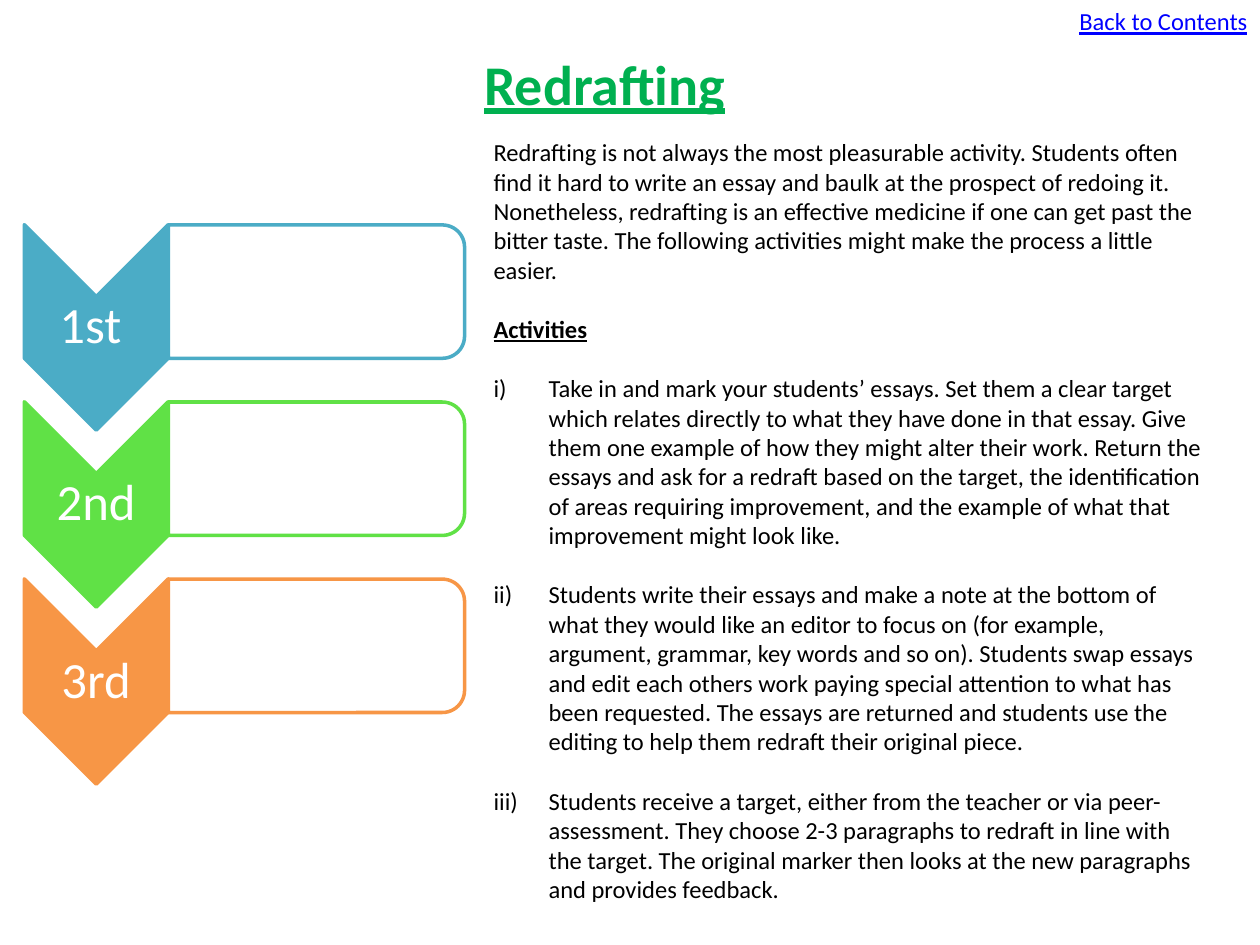
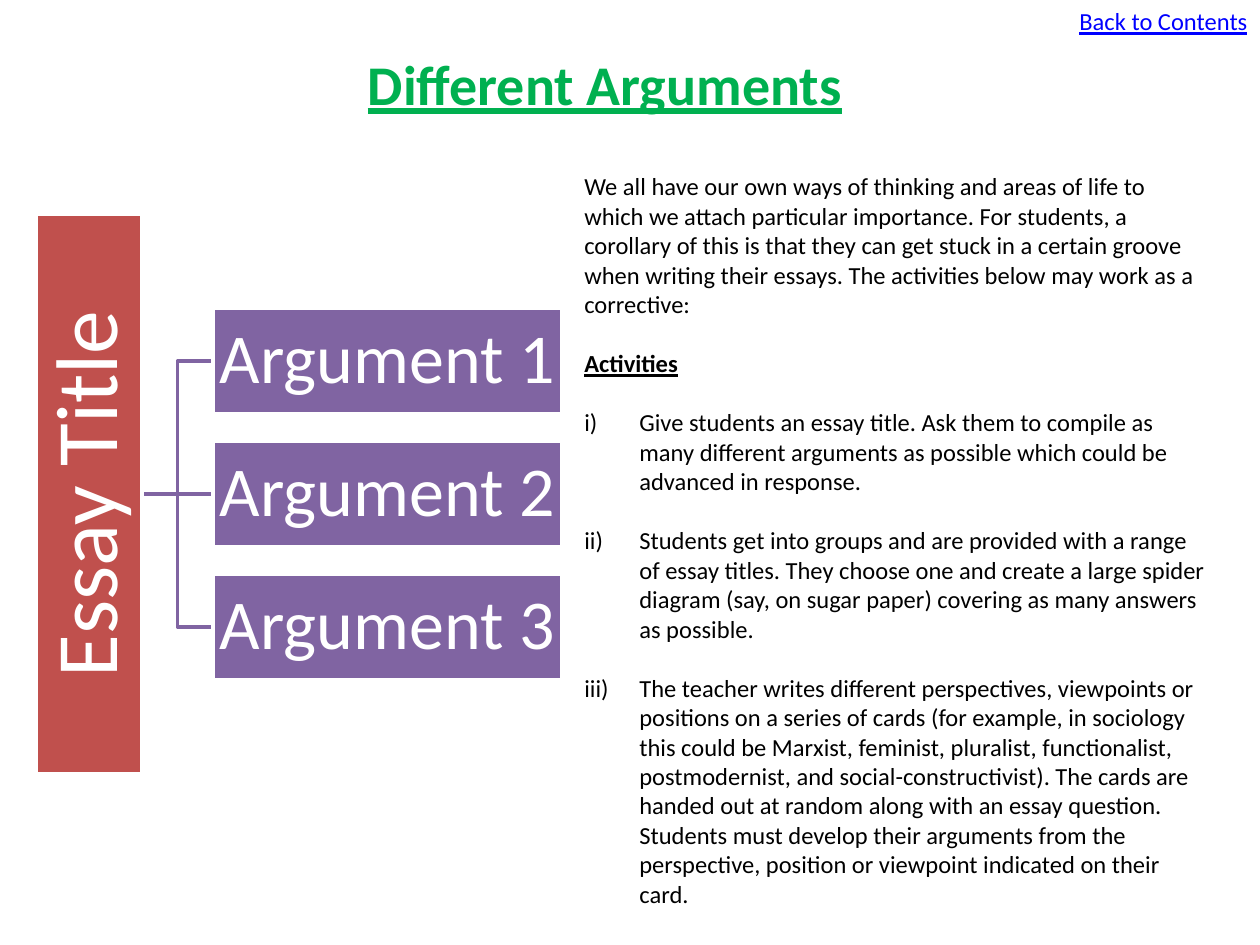
from pptx import Presentation
from pptx import util as u
from pptx.dml.color import RGBColor
from pptx.enum import shapes, text
from pptx.oxml.ns import qn
from lxml import etree

FONT = "Calibri"
BLACK = RGBColor(0x00, 0x00, 0x00)
WHITE = RGBColor(0xFF, 0xFF, 0xFF)
LINK_BLUE = RGBColor(0x00, 0x00, 0xFF)
TITLE_GREEN = RGBColor(0x00, 0xB0, 0x50)
TEAL = RGBColor(0x4B, 0xAC, 0xC6)
LIME = RGBColor(0x60, 0xE1, 0x46)
ORANGE = RGBColor(0xF7, 0x96, 0x46)
RED = RGBColor(0xC0, 0x50, 0x4D)
PURPLE = RGBColor(0x80, 0x64, 0xA2)

LINE_WIDTH = u.Pt(2)
BLANK_LINE = u.Pt(17)
NUMBER_INDENT = u.Cm(1.11)

REDRAFTING_INTRO = (
    "Redrafting is not always the most pleasurable activity. Students often find it hard to write "
    "an essay and baulk at the prospect of redoing it. Nonetheless, redrafting is an effective "
    "medicine if one can get past the bitter taste. The following activities might make the "
    "process a little easier."
)
REDRAFTING_ACTIVITIES = [
    "Take in and mark your students’ essays. Set them a clear target which relates directly to "
    "what they have done in that essay. Give them one example of how they might alter their work. "
    "Return the essays and ask for a redraft based on the target, the identification of areas "
    "requiring improvement, and the example of what that improvement might look like.",
    "Students write their essays and make a note at the bottom of what they would like an editor "
    "to focus on (for example, argument, grammar, key words and so on). Students swap essays and "
    "edit each others work paying special attention to what has been requested. The essays are "
    "returned and students use the editing to help them redraft their original piece.",
    "Students receive a target, either from the teacher or via peer-assessment. They choose 2-3 "
    "paragraphs to redraft in line with the target. The original marker then looks at the new "
    "paragraphs and provides feedback.",
]
ARGUMENTS_INTRO = (
    "We all have our own ways of thinking and areas of life to which we attach particular "
    "importance. For students, a corollary of this is that they can get stuck in a certain groove "
    "when writing their essays. The activities below may work as a corrective:"
)
ARGUMENTS_ACTIVITIES = [
    "Give students an essay title. Ask them to compile as many different arguments as possible "
    "which could be advanced in response.",
    "Students get into groups and are provided with a range of essay titles. They choose one and "
    "create a large spider diagram (say, on sugar paper) covering as many answers as possible.",
    "The teacher writes different perspectives, viewpoints or positions on a series of cards (for "
    "example, in sociology this could be Marxist, feminist, pluralist, functionalist, "
    "postmodernist, and social-constructivist). The cards are handed out at random along with an "
    "essay question. Students must develop their arguments from the perspective, position or "
    "viewpoint indicated on their card.",
]
DRAFTS = [("1st ", TEAL), ("2nd", LIME), ("3rd", ORANGE)]


def add_run(paragraph, words, size, color, bold=False, underline=False):
    run = paragraph.add_run()
    run.text = words
    run.font.name = FONT
    run.font.size = u.Pt(size)
    run.font.color.rgb = color
    run.font.bold = bold
    run.font.underline = underline


def centred_box(x, y, width, height):
    return u.Cm(x - width / 2), u.Cm(y - height / 2), u.Cm(width), u.Cm(height)


def add_text_box(slide, left, top, width, height):
    frame = slide.shapes.add_textbox(left, top, width, height).text_frame
    frame.word_wrap = True
    return frame


def add_block(slide, preset, box, fill, line, rotation=0):
    block = slide.shapes.add_shape(preset, *box)
    block.shadow.inherit = False
    block.fill.solid()
    block.fill.fore_color.rgb = fill
    block.line.color.rgb = line
    block.line.width = LINE_WIDTH
    block.rotation = rotation
    return block


def write_label(frame, words, size):
    frame.word_wrap = True
    frame.vertical_anchor = text.MSO_ANCHOR.MIDDLE
    frame.margin_left = frame.margin_right = u.Cm(0.07)
    frame.margin_top = frame.margin_bottom = u.Cm(0.07)
    label = frame.paragraphs[0]
    label.alignment = text.PP_ALIGN.CENTER
    label.line_spacing = 0.9
    add_run(label, words, size, WHITE)


def add_page(deck, heading):
    slide = deck.slides.add_slide(deck.slide_layouts[5])
    title = slide.shapes.title
    title.left, title.top = u.Cm(3.1), u.Cm(0.86)
    title.width, title.height = u.Cm(18.19), u.Cm(1.63)
    title.text_frame.vertical_anchor = text.MSO_ANCHOR.MIDDLE
    title_line = title.text_frame.paragraphs[0]
    title_line.alignment = text.PP_ALIGN.CENTER
    add_run(title_line, heading, 32, TITLE_GREEN, bold=True, underline=True)

    contents = add_text_box(slide, u.Cm(21.31), 0, u.Cm(4.09), u.Cm(0.86)).paragraphs[0]
    contents.alignment = text.PP_ALIGN.RIGHT
    add_run(contents, "Back to Contents", 14, LINK_BLUE, underline=True)
    return slide


def number_paragraph(paragraph):
    properties = paragraph._p.get_or_add_pPr()
    properties.set("marL", str(NUMBER_INDENT))
    properties.set("indent", str(-NUMBER_INDENT))
    numbering = etree.SubElement(properties, qn("a:buAutoNum"))
    numbering.set("type", "romanLcParenR")


def add_advice(slide, box, intro, activities):
    frame = add_text_box(slide, *(u.Cm(length) for length in box))
    add_run(frame.paragraphs[0], intro, 14, BLACK)
    subheading = frame.add_paragraph()
    subheading.space_before = BLANK_LINE
    add_run(subheading, "Activities", 14, BLACK, bold=True, underline=True)
    for activity in activities:
        item = frame.add_paragraph()
        item.space_before = BLANK_LINE
        number_paragraph(item)
        add_run(item, activity, 14, BLACK)


def add_draft_step(slide, y, ordinal, color):
    add_block(slide, shapes.MSO_SHAPE.CHEVRON,
              centred_box(1.94, y, 4.14, 2.9), color, color, 90)
    label = add_text_box(slide, *centred_box(1.94, y, 2.9, 1.24))
    write_label(label, ordinal, 29)
    add_block(slide, shapes.MSO_SHAPE.ROUND_2_SAME_RECTANGLE,
              centred_box(6.38, y - 0.72, 2.69, 5.97), WHITE, color, 90)


def add_branch(slide, trunk, argument, kind):
    branch = slide.shapes.add_connector(kind, 0, 0, 0, 0)
    branch.begin_connect(trunk, 3)
    branch.end_connect(argument, 1)
    branch.line.color.rgb = PURPLE
    branch.line.width = LINE_WIDTH
    etree.SubElement(branch.element.spPr, qn("a:effectLst"))
    trunk.element.addprevious(branch.element)


def add_argument_tree(slide):
    middle = 9.96
    essay = add_block(slide, shapes.MSO_SHAPE.RECTANGLE,
                      centred_box(1.8, middle, 2.13, 11.28), RED, WHITE)
    write_label(essay.text_frame, "Essay Title", 50)
    essay.text_frame._txBody.bodyPr.set("vert", "vert270")
    for number in (1, 2, 3):
        argument = add_block(slide, shapes.MSO_SHAPE.RECTANGLE,
                             centred_box(7.81, middle + (number - 2) * 2.68, 7.04, 2.13),
                             PURPLE, WHITE)
        write_label(argument.text_frame, f"Argument {number}", 40)
        kind = shapes.MSO_CONNECTOR.STRAIGHT if number == 2 else shapes.MSO_CONNECTOR.ELBOW
        add_branch(slide, essay, argument, kind)


def main():
    deck = Presentation()
    deck.slide_width, deck.slide_height = u.Cm(25.4), u.Cm(19.05)

    redrafting = add_page(deck, "Redrafting")
    add_advice(redrafting, (9.7, 2.64, 14.86, 16.41), REDRAFTING_INTRO, REDRAFTING_ACTIVITIES)
    for step, (ordinal, color) in enumerate(DRAFTS):
        add_draft_step(redrafting, 6.6 + step * 3.57, ordinal, color)

    arguments = add_page(deck, "Different Arguments")
    add_advice(arguments, (11.53, 3.33, 13.11, 15.21), ARGUMENTS_INTRO, ARGUMENTS_ACTIVITIES)
    add_argument_tree(arguments)

    deck.save("out.pptx")


if __name__ == "__main__":
    main()
